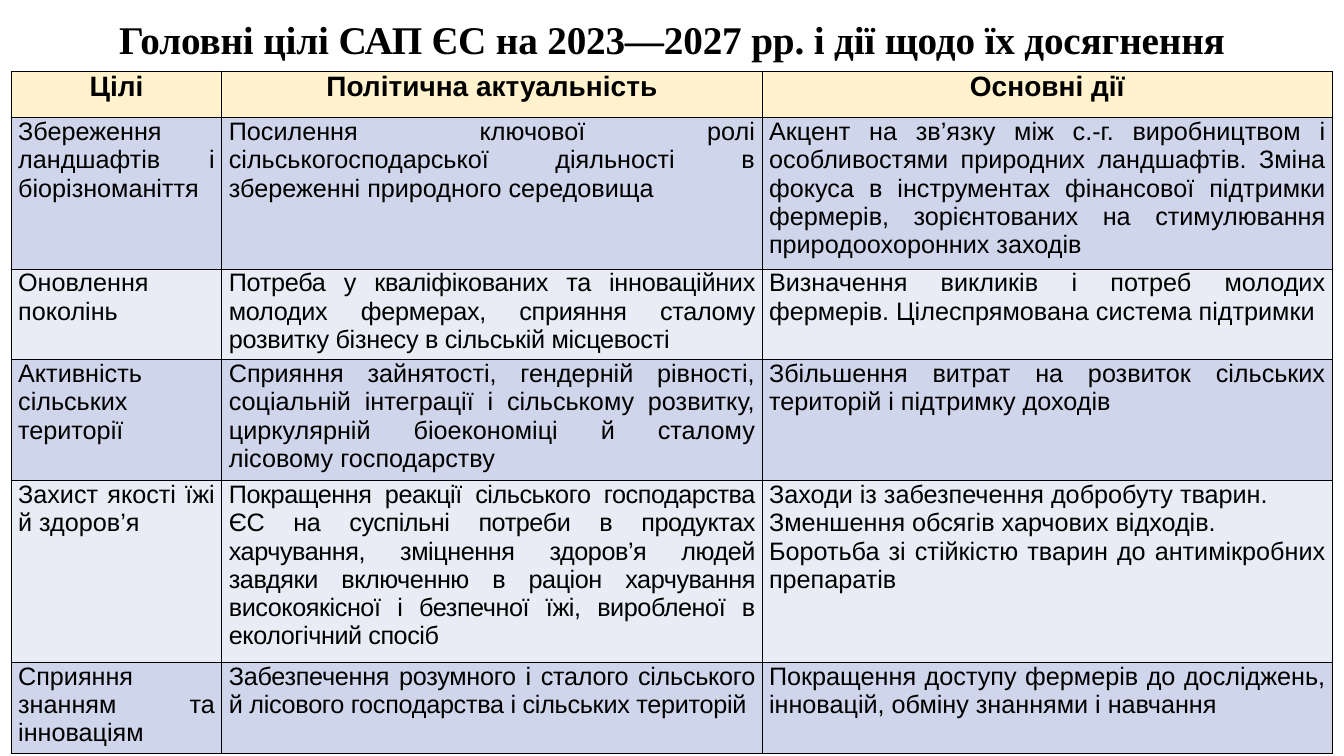
"""Build a slide with a table of the EU agricultural policy goals for 2023—2027."""
from lxml import etree
from pptx import Presentation
from pptx.dml.color import RGBColor
from pptx.enum.text import MSO_ANCHOR, PP_ALIGN
from pptx.oxml.ns import qn
from pptx.util import Pt

CENTER, JUSTIFY = PP_ALIGN.CENTER, PP_ALIGN.JUSTIFY
TOP, MIDDLE = MSO_ANCHOR.TOP, MSO_ANCHOR.MIDDLE

COLORS = {
    "text": "000000",
    "border": "000000",
    "header": "FFF2CC",
    "odd": "CFD5EA",
    "even": "E9EBF5",
}
TITLE = "Головні цілі САП ЄС на 2023—2027 рр. і дії щодо їх досягнення"
HEADINGS = ["Цілі", "Політична актуальність", "Основні дії"]
GOALS = [
    ["Збереження ландшафтів і біорізноманіття",
     "Посилення ключової ролі сільськогосподарської діяльності в збереженні "
     "природного середовища",
     "Акцент на зв’язку між с.-г. виробництвом і особливостями природних ландшафтів. "
     "Зміна фокуса в інструментах фінансової підтримки фермерів, зорієнтованих на "
     "стимулювання природоохоронних заходів"],
    ["Оновлення поколінь",
     "Потреба у кваліфікованих та інноваційних молодих фермерах, сприяння сталому "
     "розвитку бізнесу в сільській місцевості",
     "Визначення викликів і потреб молодих фермерів. Цілеспрямована система підтримки"],
    ["Активність сільських території",
     "Сприяння зайнятості, гендерній рівності, соціальній інтеграції і сільському "
     "розвитку, циркулярній біоекономіці й сталому лісовому господарству",
     "Збільшення витрат на розвиток сільських територій і підтримку доходів"],
    ["Захист якості їжі й здоров’я",
     "Покращення реакції сільського господарства ЄС на суспільні потреби в продуктах "
     "харчування, зміцнення здоров’я людей завдяки включенню в раціон харчування "
     "високоякісної і безпечної їжі, виробленої в екологічний спосіб",
     "Заходи із забезпечення добробуту тварин.\n"
     "Зменшення обсягів харчових відходів.\n"
     "Боротьба зі стійкістю тварин до антимікробних препаратів"],
    ["Сприяння знанням та інноваціям",
     "Забезпечення розумного і сталого сільського й лісового господарства і "
     "сільських територій",
     "Покращення доступу фермерів до досліджень, інновацій, обміну знаннями і навчання"],
]
TRACKING = {(2, 1): -0.2, (4, 1): -0.3, (5, 1): -0.2}
COLUMN_WIDTHS = [150.5, 385.9, 407.5]
ROW_HEIGHTS = [33.1, 103.7, 62, 82.8, 123.8, 62]


def write_text(frame, text, font="Arial", size=18, bold=False, align=JUSTIFY,
               line_spacing=1.0, tracking=0):
    """Fill a text frame, one paragraph for each line of the text."""
    frame.word_wrap = True
    for index, line in enumerate(text.split("\n")):
        paragraph = frame.add_paragraph() if index else frame.paragraphs[0]
        paragraph.alignment = align
        paragraph.line_spacing = line_spacing
        run = paragraph.add_run()
        run.text = line
        run.font.name = font
        run.font.size = Pt(size)
        run.font.bold = bold
        run.font.color.rgb = RGBColor.from_string(COLORS["text"])
        if tracking:
            run.font._element.set("spc", str(round(tracking * 100)))


def add_borders(cell, width=1):
    """Draw a solid line on all four sides of a cell."""
    properties = cell._tc.get_or_add_tcPr()
    for position, side in enumerate(("a:lnL", "a:lnR", "a:lnT", "a:lnB")):
        border = etree.Element(qn(side), w=str(Pt(width)))
        fill = etree.SubElement(border, qn("a:solidFill"))
        etree.SubElement(fill, qn("a:srgbClr"), val=COLORS["border"])
        properties.insert(position, border)


def add_title(slide):
    """Add the slide heading."""
    heading = slide.shapes.add_textbox(Pt(66), Pt(6.5), Pt(828), Pt(46.8))
    heading.text_frame.vertical_anchor = MIDDLE
    write_text(heading.text_frame, TITLE, font="Times New Roman", size=28, bold=True,
               align=CENTER, line_spacing=0.9, tracking=-0.1)


def fill_cell(cell, text, color, **text_format):
    """Set the fill, margins, borders and text of a cell."""
    cell.fill.solid()
    cell.fill.fore_color.rgb = RGBColor.from_string(COLORS[color])
    cell.margin_left = cell.margin_right = Pt(5)
    cell.margin_top = cell.margin_bottom = 0
    cell.vertical_anchor = TOP
    add_borders(cell)
    write_text(cell.text_frame, text, **text_format)


def add_goals_table(slide):
    """Add the table of goals, their relevance and actions."""
    rows = [HEADINGS] + GOALS
    goals = slide.shapes.add_table(
        len(rows), len(HEADINGS), Pt(8), Pt(51.1),
        Pt(sum(COLUMN_WIDTHS)), Pt(sum(ROW_HEIGHTS))).table
    goals.horz_banding = False
    goals.first_row = True
    for column, width in zip(goals.columns, COLUMN_WIDTHS):
        column.width = Pt(width)
    for row, height in zip(goals.rows, ROW_HEIGHTS):
        row.height = Pt(height)
    for row_index, texts in enumerate(rows):
        for column_index, text in enumerate(texts):
            cell = goals.cell(row_index, column_index)
            if row_index == 0:
                fill_cell(cell, text, "header", size=20, bold=True, align=CENTER)
            else:
                fill_cell(cell, text, "odd" if row_index % 2 else "even",
                          tracking=TRACKING.get((row_index, column_index), 0))


def main():
    """Build and save the presentation."""
    presentation = Presentation()
    presentation.slide_width, presentation.slide_height = Pt(960), Pt(540)
    slide = presentation.slides.add_slide(presentation.slide_layouts[6])
    add_title(slide)
    add_goals_table(slide)
    presentation.save("out.pptx")


if __name__ == "__main__":
    main()
